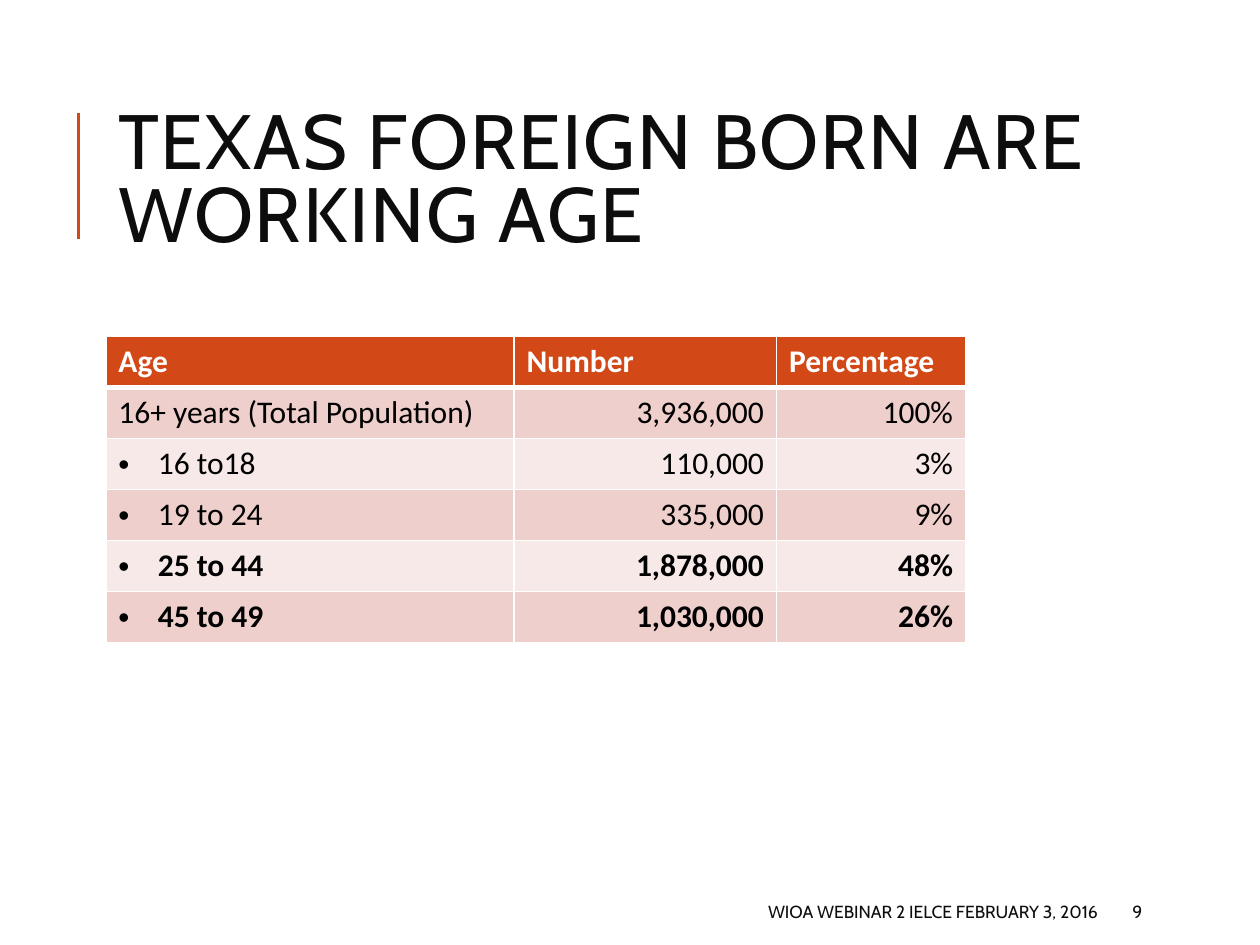
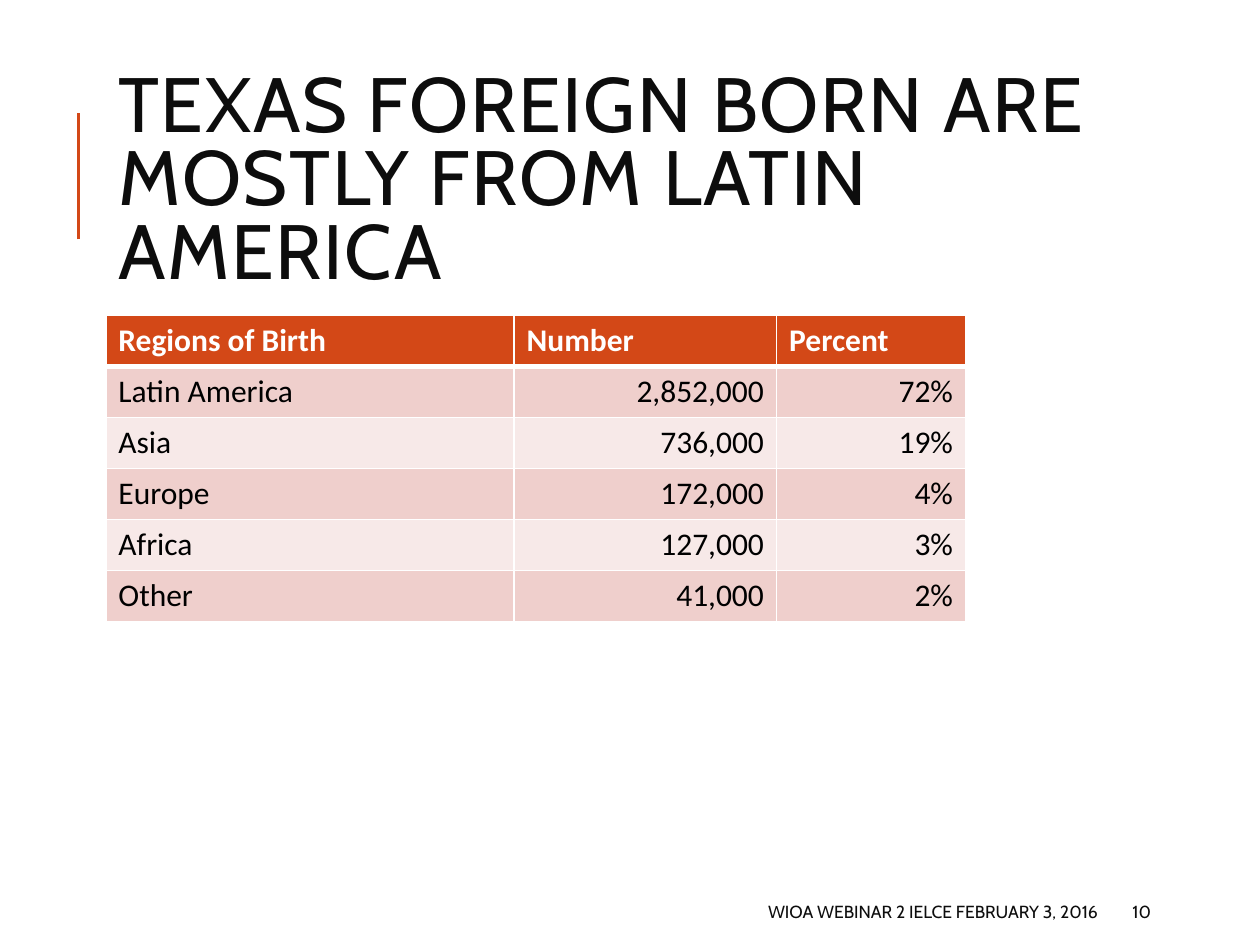
from pptx import Presentation
from pptx.dml.color import RGBColor
from pptx.enum.shapes import MSO_CONNECTOR
from pptx.enum.text import MSO_ANCHOR, PP_ALIGN
from pptx.oxml.ns import qn
from pptx.util import Pt
from lxml import etree

LEFT, RIGHT = PP_ALIGN.LEFT, PP_ALIGN.RIGHT
MIDDLE = MSO_ANCHOR.MIDDLE
LINE = MSO_CONNECTOR.STRAIGHT

FOOTER = "WIOA WEBINAR 2 IELCE FEBRUARY 3, 2016"
SLIDES = [
    {
        "title": "TEXAS FOREIGN BORN ARE WORKING AGE",
        "page": 9,
        "top": 192.4,
        "head": ("Age", "Number", "Percentage"),
        "rows": [
            ("16+ years (Total Population)", "3,936,000", "100%"),
            ("16 to18", "110,000", "3%"),
            ("19 to 24", "335,000", "9%"),
            ("25 to 44", "1,878,000", "48%"),
            ("45 to 49", "1,030,000", "26%"),
        ],
        "bullets": {2, 3, 4, 5},
        "strong": {4, 5},
    },
    {
        "title": "TEXAS FOREIGN BORN ARE MOSTLY FROM LATIN AMERICA",
        "page": 10,
        "top": 180.3,
        "head": ("Regions of Birth", "Number", "Percent"),
        "rows": [
            ("Latin America", "2,852,000", "72%"),
            ("Asia", "736,000", "19%"),
            ("Europe", "172,000", "4%"),
            ("Africa", "127,000", "3%"),
            ("Other", "41,000", "2%"),
        ],
        "bullets": set(),
        "strong": set(),
    },
]


class Theme:
    accent = "D34817"
    white = "FFFFFF"
    black = "000000"
    ink = "0D0D0D"
    bands = ("F7E9E8", "EFCFCC")
    title = {"name": "Cabin", "size": Pt(44)}
    foot = {"name": "Cabin", "size": Pt(10)}
    cell = {"name": "Calibri", "size": Pt(18)}
    rule = 1.5
    thin, thick = 1, 3


EDGE = 60.5
WIDTHS = (233.3, 150, 108)
HEIGHT = 29.16
INDENT = 22.5
TITLE_BOX = (EDGE, 46, 574, 118)
FOOT_BOX = (286, 510, 348.3, 21.6)
PAGE_BOX = (640, 510, 57.6, 21.6)


def write(frame, text, style, color, align=LEFT, bold=False):
    par = frame.paragraphs[0]
    par.alignment = align
    run = par.add_run()
    run.text = text
    for key, value in {**style, "bold": bold}.items():
        setattr(run.font, key, value)
    run.font.color.rgb = RGBColor.from_string(color)
    return par


def add_text(slide, box, text, style, align=LEFT):
    frame = slide.shapes.add_textbox(*map(Pt, box)).text_frame
    frame.word_wrap = True
    frame.vertical_anchor = MIDDLE
    return write(frame, text, style, Theme.ink, align)


def add_rule(slide):
    rule = slide.shapes.add_connector(LINE, Pt(44.8), Pt(136.8), Pt(44.8), Pt(64.8))
    rule.line.color.rgb = RGBColor.from_string(Theme.accent)
    rule.line.width = Pt(Theme.rule)
    etree.SubElement(rule._element.spPr, qn("a:effectLst"))


def add_bullet(par):
    props = par._p.get_or_add_pPr()
    props.set("marL", str(Pt(INDENT)))
    props.set("indent", str(-Pt(INDENT)))
    etree.SubElement(props, qn("a:buFont"), typeface="Arial")
    etree.SubElement(props, qn("a:buChar"), char="•")


def add_edges(cell, row):
    props = cell._tc.get_or_add_tcPr()
    sizes = {
        "lnL": Theme.thin,
        "lnR": Theme.thin,
        "lnT": Theme.thick if row == 1 else Theme.thin,
        "lnB": Theme.thick if row == 0 else Theme.thin,
    }
    for side, size in sizes.items():
        line = etree.SubElement(props, qn(f"a:{side}"), w=str(Pt(size)))
        fill = etree.SubElement(line, qn("a:solidFill"))
        etree.SubElement(fill, qn("a:srgbClr"), val=Theme.white)


def add_grid(slide, data):
    lines = [data["head"], *data["rows"]]
    box = (EDGE, data["top"], sum(WIDTHS), HEIGHT * len(lines))
    grid = slide.shapes.add_table(len(lines), len(WIDTHS), *map(Pt, box)).table
    for col, width in zip(grid.columns, WIDTHS):
        col.width = Pt(width)
    for row, line in enumerate(lines):
        grid.rows[row].height = Pt(HEIGHT)
        head = row == 0
        fill = Theme.accent if head else Theme.bands[row % 2]
        color = Theme.white if head else Theme.black
        bold = head or row in data["strong"]
        for col, text in enumerate(line):
            cell = grid.cell(row, col)
            add_edges(cell, row)
            cell.fill.solid()
            cell.fill.fore_color.rgb = RGBColor.from_string(fill)
            align = RIGHT if col and not head else LEFT
            par = write(cell.text_frame, text, Theme.cell, color, align, bold)
            if col == 0 and row in data["bullets"]:
                add_bullet(par)


def add_slide(deck, data):
    slide = deck.slides.add_slide(deck.slide_layouts[6])
    add_rule(slide)
    title = add_text(slide, TITLE_BOX, data["title"], Theme.title)
    title.line_spacing = 0.8
    title.runs[0].font._element.set("spc", "100")
    add_grid(slide, data)
    add_text(slide, FOOT_BOX, FOOTER, Theme.foot, RIGHT)
    add_text(slide, PAGE_BOX, str(data["page"]), Theme.foot)


def main():
    deck = Presentation()
    deck.slide_width, deck.slide_height = Pt(720), Pt(540)
    for data in SLIDES:
        add_slide(deck, data)
    deck.save("out.pptx")


if __name__ == "__main__":
    main()
